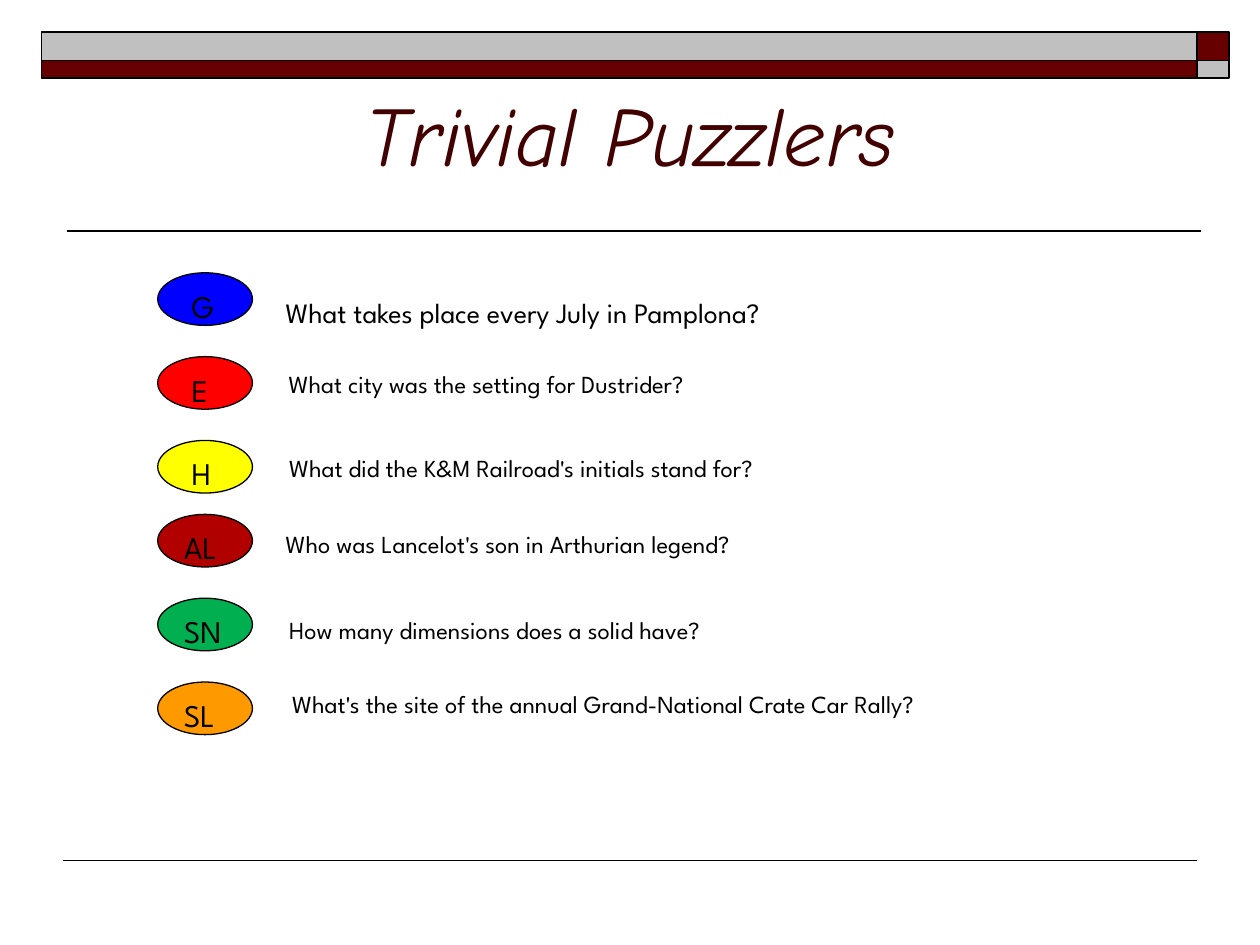
from pptx import Presentation
from pptx import util as u
from pptx.dml.color import RGBColor
from pptx.enum import shapes, text
from pptx.oxml.ns import qn
from lxml import etree

BLACK, MAROON, SILVER = "000000", "660000", "C0C0C0"
BODY_FONT, TITLE_FONT = "League Spartan", "Comic Neue"

BAR_LEFT, BAR_SPLIT, BAR_RIGHT = 0.84, 24.13, 24.77
BAR_ROWS = [(0.64, 0.58, SILVER, MAROON), (1.22, 0.36, MAROON, SILVER)]
RULES = [(1.35, 4.65, 1), (1.27, 17.35, 0.75)]
RULE_WIDTH = 22.86

OVAL_LEFT, OVAL_WIDTH, OVAL_HEIGHT = 3.18, 1.91, 1.06
GROUP_TOPS, GROUP_SIZE, ROW_PITCH = (5.5, 10.37), 3, 1.69
SINGLE_LETTER_SHIFT = 0.15

QUESTIONS = [
    ("G", "0000FF", "What takes place every July in Pamplona?", 5.51, 5.83, 16),
    ("E", "FF0000", "What city was the setting for Dustrider?", 5.57, 7.31, 14),
    ("H", "FFFF00", "What did the K&M Railroad's initials stand for?", 5.58, 9.0, 14),
    ("AL", "B10000", "Who was Lancelot's son in Arthurian legend?", 5.51, 10.54, 14),
    ("SN", "00B050", "How many dimensions does a solid have?", 5.58, 12.27, 14),
    ("SL", "FF9900", "What's the site of the annual Grand-National Crate Car Rally?", 5.64, 13.76, 14),
]


def color(value):
    return RGBColor.from_string(value)


def write(frame, content, size, font=BODY_FONT, fill=BLACK, italic=False,
          align=text.PP_ALIGN.LEFT, anchor=text.MSO_ANCHOR.TOP):
    frame.word_wrap = True
    frame.auto_size = text.MSO_AUTO_SIZE.NONE
    frame.vertical_anchor = anchor
    paragraph = frame.paragraphs[0]
    paragraph.alignment = align
    run = paragraph.add_run()
    run.text = content
    run.font.name = font
    run.font.size = u.Pt(size)
    run.font.italic = italic
    run.font.color.rgb = color(fill)


class SlideBuilder:
    def __init__(self, slide):
        self.slide = slide

    def title(self, content):
        title = self.slide.shapes.title
        title.left, title.top = u.Cm(1.27), u.Cm(0.64)
        title.width, title.height = u.Cm(22.86), u.Cm(3.18)
        write(title.text_frame, content, 48, font=TITLE_FONT, fill="420000", italic=True,
              align=text.PP_ALIGN.CENTER, anchor=text.MSO_ANCHOR.BOTTOM)

    def shape(self, kind, left, top, width, height, fill, line_width):
        shape = self.slide.shapes.add_shape(kind, u.Cm(left), u.Cm(top), u.Cm(width), u.Cm(height))
        shape.shadow.inherit = False
        shape.fill.solid()
        shape.fill.fore_color.rgb = color(fill)
        shape.line.color.rgb = color(BLACK)
        shape.line.width = u.Pt(line_width)
        return shape

    def bar(self, left, top, right, height, fill):
        self.shape(shapes.MSO_SHAPE.RECTANGLE, left, top, right - left, height, fill, 1)

    def rule(self, left, top, line_width):
        line = self.slide.shapes.add_connector(
            shapes.MSO_CONNECTOR.STRAIGHT, u.Cm(left), u.Cm(top), u.Cm(left + RULE_WIDTH), u.Cm(top))
        line.line.color.rgb = color(BLACK)
        line.line.width = u.Pt(line_width)
        etree.SubElement(line._element.spPr, qn("a:effectLst"))

    def category(self, label, top, fill):
        oval = self.shape(shapes.MSO_SHAPE.OVAL, OVAL_LEFT, top, OVAL_WIDTH, OVAL_HEIGHT, fill, 0.75)
        write(oval.text_frame, label, 18)
        if len(label) == 1:
            oval.text_frame.margin_left += u.Cm(SINGLE_LETTER_SHIFT)

    def question(self, content, left, top, size):
        box = self.slide.shapes.add_textbox(u.Cm(left), u.Cm(top), u.Cm(17), u.Cm(0.9))
        write(box.text_frame, content, size)


def main():
    presentation = Presentation()
    presentation.slide_width, presentation.slide_height = u.Cm(25.4), u.Cm(19.05)
    builder = SlideBuilder(presentation.slides.add_slide(presentation.slide_layouts[5]))

    for top, height, long_fill, short_fill in BAR_ROWS:
        builder.bar(BAR_LEFT, top, BAR_SPLIT, height, long_fill)
        builder.bar(BAR_SPLIT, top, BAR_RIGHT, height, short_fill)
    for left, top, line_width in RULES:
        builder.rule(left, top, line_width)
    builder.title("Trivial Puzzlers")

    for index, (label, fill, content, left, top, size) in enumerate(QUESTIONS):
        group, row = divmod(index, GROUP_SIZE)
        builder.category(label, GROUP_TOPS[group] + row * ROW_PITCH, fill)
        builder.question(content, left, top, size)

    presentation.save("out.pptx")


if __name__ == "__main__":
    main()
